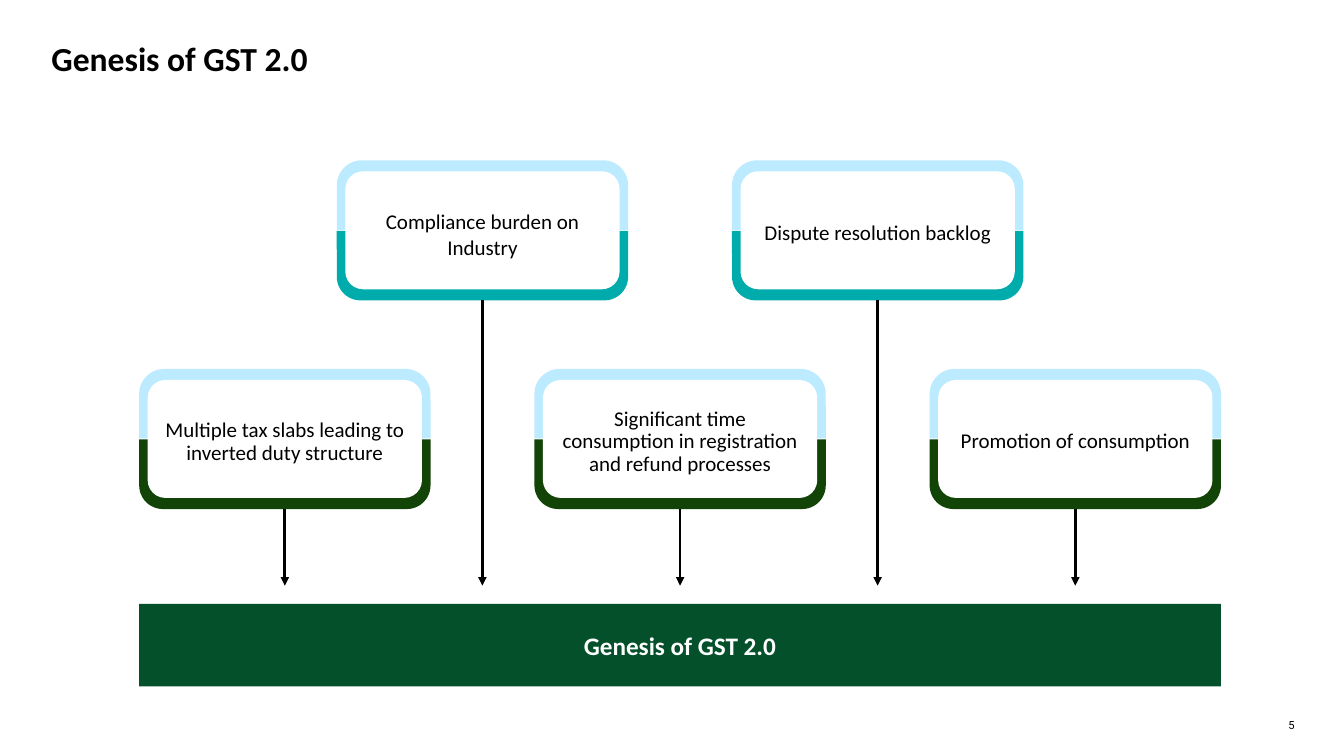
from dataclasses import dataclass

from lxml import etree
from pptx import Presentation
from pptx.dml.color import RGBColor
from pptx.enum.shapes import MSO_CONNECTOR, MSO_SHAPE
from pptx.enum.text import MSO_ANCHOR, PP_ALIGN
from pptx.oxml.ns import qn
from pptx.util import Inches, Pt

LEFT, CENTER, RIGHT = PP_ALIGN.LEFT, PP_ALIGN.CENTER, PP_ALIGN.RIGHT
TOP, MIDDLE = MSO_ANCHOR.TOP, MSO_ANCHOR.MIDDLE
RECTANGLE, ROUNDED = MSO_SHAPE.RECTANGLE, MSO_SHAPE.ROUNDED_RECTANGLE
HALF_FRAME = MSO_SHAPE.ROUND_2_SAME_RECTANGLE
STRAIGHT = MSO_CONNECTOR.STRAIGHT


@dataclass(frozen=True)
class Theme:
    black: str = "000000"
    white: str = "FFFFFF"
    sky: str = "BCEBFF"
    teal: str = "00ABAB"
    forest: str = "134407"
    green: str = "03502A"
    font: str = "Calibri"
    number_font: str = "Roboto"
    title_size: float = 24
    banner_size: float = 18
    card_size: float = 15
    number_size: float = 8
    arrow_width: float = 2


THEME = Theme()
PAGE_WIDTH, PAGE_HEIGHT = 13.33, 7.5
GRID_LEFT, COLUMN_STEP = 1.38, 1.96
ROW_TOPS = (3.66, 1.59)
ROW_COLORS = (THEME.forest, THEME.teal)
CARD_WIDTH, HALF_HEIGHT, HALF_STEP = 2.89, 0.69, 0.7
FACE_INSET_X, FACE_INSET_Y = 0.085, 0.11
ARROW_END = 5.81
BANNER_BOX = (GRID_LEFT, 5.99, 10.73, 0.82)

CARDS = (
    ("Multiple tax slabs leading to inverted duty structure", 0.9),
    ("Compliance burden on Industry", 1.06),
    ("Significant time consumption in registration and refund processes", 0.9),
    ("Dispute resolution backlog", 0.9),
    ("Promotion of consumption", 0.9),
)


def write_text(shape, text, size, color=THEME.black, font=THEME.font, bold=False,
               align=CENTER, anchor=MIDDLE, margins=(0, 0, 0, 0), spacing=1.0):
    frame = shape.text_frame
    frame.word_wrap = True
    frame.vertical_anchor = anchor
    for side, margin in zip(("left", "top", "right", "bottom"), margins):
        setattr(frame, f"margin_{side}", Inches(margin))
    para = frame.paragraphs[0]
    para.alignment = align
    para.line_spacing = spacing
    span = para.add_run()
    span.text = text
    for name, value in {"name": font, "size": Pt(size), "bold": bold}.items():
        setattr(span.font, name, value)
    span.font.color.rgb = RGBColor.from_string(color)


def add_label(page, box, text, **style):
    label = page.shapes.add_textbox(*map(Inches, box))
    write_text(label, text, **style)


def add_block(page, kind, box, color, adjustments=(), rotation=0):
    block = page.shapes.add_shape(kind, *map(Inches, box))
    block.shadow.inherit = False
    block.fill.solid()
    block.fill.fore_color.rgb = RGBColor.from_string(color)
    block.line.fill.background()
    block.rotation = rotation
    for index, value in enumerate(adjustments):
        block.adjustments[index] = value
    return block


def add_card(page, left, top, lower_color, text, spacing):
    halves = ((top, THEME.sky, 0.36, 0),
              (top + HALF_STEP, lower_color, 0.34, 180))
    for half_top, color, rounding, rotation in halves:
        add_block(page, HALF_FRAME, (left, half_top, CARD_WIDTH, HALF_HEIGHT),
                  color, (rounding, 0), rotation)
    height = HALF_STEP + HALF_HEIGHT
    face_box = (left + FACE_INSET_X, top + FACE_INSET_Y,
                CARD_WIDTH - 2 * FACE_INSET_X, height - 2 * FACE_INSET_Y)
    face = add_block(page, ROUNDED, face_box, THEME.white, (0.15,))
    write_text(face, text, THEME.card_size, spacing=spacing,
               margins=(0.1, 0.16, 0.1, 0.1))


def add_arrow(page, x, start, end):
    arrow = page.shapes.add_connector(STRAIGHT, *map(Inches, (x, start, x, end)))
    arrow.line.width = Pt(THEME.arrow_width)
    arrow.line.color.rgb = RGBColor.from_string(THEME.black)
    etree.SubElement(arrow.line._get_or_add_ln(), qn("a:tailEnd"), type="triangle")
    etree.SubElement(arrow._element.spPr, qn("a:effectLst"))


def add_causes(page):
    for column, (text, spacing) in enumerate(CARDS):
        row = column % 2
        left, top = GRID_LEFT + column * COLUMN_STEP, ROW_TOPS[row]
        add_card(page, left, top, ROW_COLORS[row], text, spacing)
        add_arrow(page, left + CARD_WIDTH / 2, top + HALF_STEP + HALF_HEIGHT, ARROW_END)


def add_banner(page, box, text):
    banner = add_block(page, RECTANGLE, box, THEME.green)
    write_text(banner, text, THEME.banner_size, THEME.white, bold=True,
               margins=(0.08,) * 4)


def main():
    deck = Presentation()
    deck.slide_width, deck.slide_height = Inches(PAGE_WIDTH), Inches(PAGE_HEIGHT)
    page = deck.slides.add_slide(deck.slide_layouts[6])
    add_label(page, (12.5, 7.13, 0.34, 0.13), "5", size=THEME.number_size,
              font=THEME.number_font, align=RIGHT, anchor=TOP)
    add_label(page, (0.51, 0.38, 12.33, 0.37), "Genesis of GST 2.0",
              size=THEME.title_size, bold=True, align=LEFT, anchor=TOP)
    add_causes(page)
    add_banner(page, BANNER_BOX, "Genesis of GST 2.0")
    deck.save("out.pptx")


if __name__ == "__main__":
    main()
